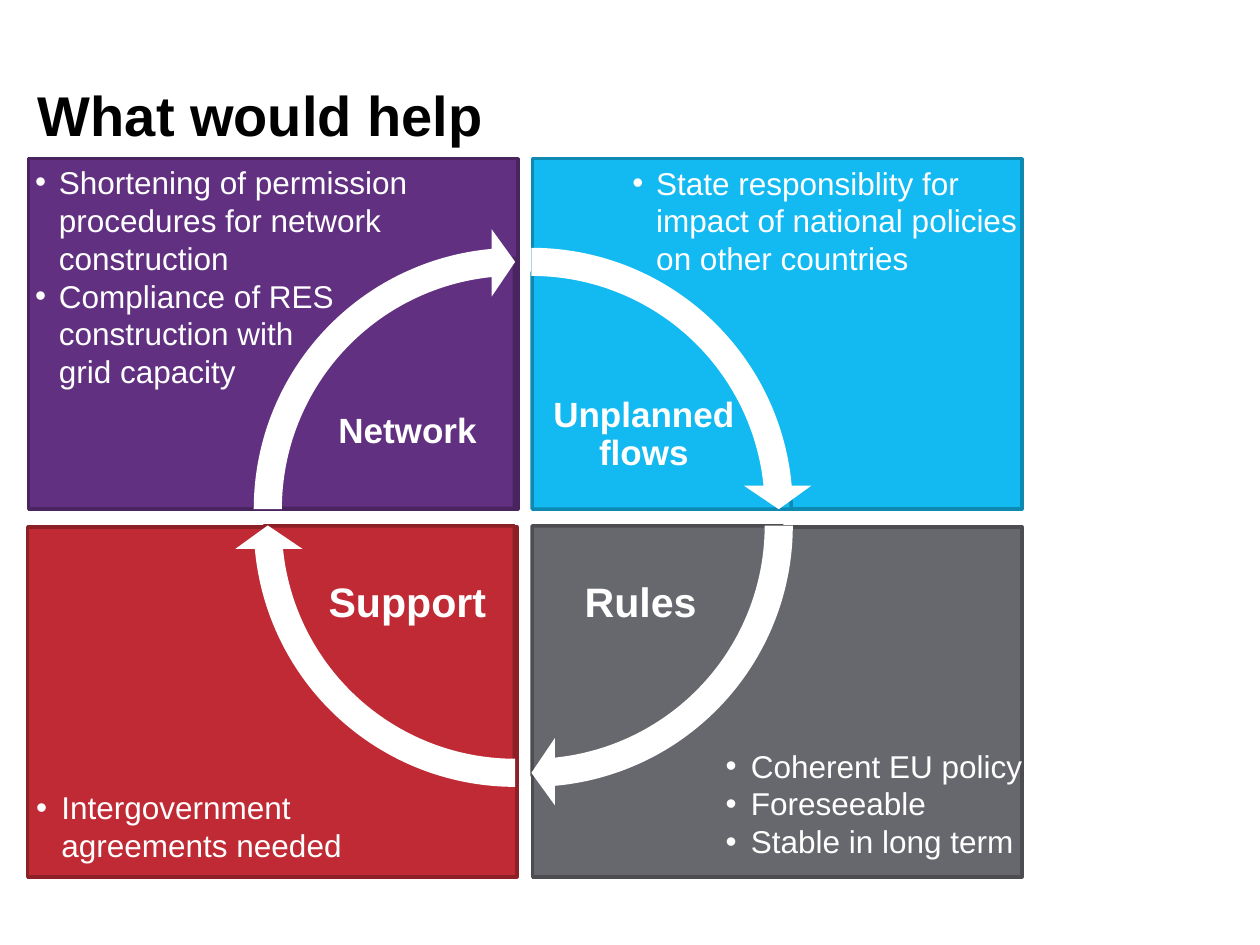
from dataclasses import dataclass

from lxml.etree import SubElement
from pptx import Presentation
from pptx.dml.color import RGBColor
from pptx.enum.shapes import MSO_SHAPE as Preset
from pptx.enum.text import MSO_ANCHOR as Anchor, PP_ALIGN as Align
from pptx.oxml.ns import qn
from pptx.util import Cm, Pt

COLORS = {
    "text": "000000", "white": "FFFFFF",
    "blue": "13B9F1", "blue_edge": "0E89B2",
    "purple": "623080", "purple_edge": "49245F",
    "red": "BF2A34", "red_edge": "8D1F26",
    "gray": "67676E", "gray_edge": "4C4C51",
}
PANEL_SIZE = (9.86, 7.06)
ARROW_SIZE = (11.33, 11.33)
DEFAULT_INSETS = (0.25, 0.13, 0.25, 0.13)
LABEL_INSETS = (0.08,) * 4
QUARTER = 54  # 90 degrees in the units of the angle adjustments
ARROW_SWEEP = 50.73


@dataclass
class Quadrant:
    """One topic; boxes are (left, top, width, height) in centimetres."""
    label: str
    label_size: float
    color: str
    start: int
    panel_at: tuple
    points: list
    points_box: tuple
    sector_box: tuple
    label_box: tuple
    arrow_at: tuple
    insets: tuple = DEFAULT_INSETS
    hanging: float = 0.51


QUADRANTS = [
    Quadrant("Unplanned flows", 20, "blue", 3 * QUARTER, (10.74, 3.2),
             ["State responsiblity for impact of national policies on other countries"],
             (12.34, 3.25, 8.23, 2.51), (5.51, 5.49, 10.44, 9.55),
             (11.05, 7.47, 3.86, 2.62), (5.05, 4.6), (0.41, 0, 0, 0.13), 0.48),
    Quadrant("Rules", 23.5, "gray", 0, (10.74, 10.62),
             ["Coherent EU policy", "Foreseeable", "Stable in long term"],
             (14.38, 14.58, 6.63, 3.23), (5.69, 5.56, 10.08, 10.08),
             (11.05, 10.8, 3.73, 2.77), (5.05, 4.93)),
    Quadrant("Support", 23.5, "red", QUARTER, (0.56, 10.62),
             ["Intergovernment agreements needed"],
             (0.48, 15.7, 7.57, 1.91), (5.33, 5.56, 10.08, 10.08),
             (6.35, 10.8, 3.73, 2.77), (4.72, 4.93)),
    Quadrant("Network", 20, "purple", 2 * QUARTER, (0.58, 3.2),
             ["Shortening of permission procedures for network construction",
              "Compliance of RES construction with\vgrid capacity"],
             (0.46, 3.3, 9.58, 4.55), (5.33, 5.21, 10.08, 10.08),
             (6.35, 7.32, 3.73, 2.77), (4.72, 4.6), (0.25, 0.13, 0, 0.13), 0.48),
]


class SlideBuilder:
    font_name = "Arial"

    def __init__(self, slide):
        self.slide = slide

    def style(self, paragraph, size, color="white", bold=False):
        font = paragraph.font
        font.name, font.size, font.bold = self.font_name, Pt(size), bold
        font.color.rgb = RGBColor.from_string(COLORS[color])

    def title(self, text, box):
        heading = self.slide.shapes.title
        heading.left, heading.top, heading.width, heading.height = map(Cm, box)
        frame = heading.text_frame
        frame.text = text
        frame.vertical_anchor = Anchor.MIDDLE
        frame.paragraphs[0].alignment = Align.LEFT
        self.style(frame.paragraphs[0], 32, "text", True)

    def shape(self, preset, box, color, edge=None, adjustments=()):
        shape = self.slide.shapes.add_shape(preset, *map(Cm, box))
        shape.shadow.inherit = False
        shape.fill.solid()
        shape.fill.fore_color.rgb = RGBColor.from_string(COLORS[color])
        if edge:
            shape.line.color.rgb = RGBColor.from_string(COLORS[edge])
            shape.line.width = Pt(2)
        else:
            shape.line.fill.background()
        for index, value in enumerate(adjustments):
            shape.adjustments[index] = value

    def text_frame(self, box, insets):
        frame = self.slide.shapes.add_textbox(*map(Cm, box)).text_frame
        frame.word_wrap = True
        frame.vertical_anchor = Anchor.MIDDLE
        (frame.margin_left, frame.margin_top,
         frame.margin_right, frame.margin_bottom) = map(Cm, insets)
        return frame

    def bullets(self, points, box, insets, hanging):
        frame = self.text_frame(box, insets)
        for index, point in enumerate(points):
            paragraph = frame.add_paragraph() if index else frame.paragraphs[0]
            paragraph.text = point
            properties = paragraph._p.get_or_add_pPr()
            properties.set("marL", str(Cm(hanging)))
            properties.set("indent", str(-Cm(hanging)))
            SubElement(properties, qn("a:buFont"), typeface=self.font_name)
            SubElement(properties, qn("a:buChar"), char="•")
            self.style(paragraph, 18)

    def label(self, text, size, box):
        paragraph = self.text_frame(box, LABEL_INSETS).paragraphs[0]
        paragraph.text = text
        paragraph.alignment = Align.CENTER
        paragraph.line_spacing = 0.9
        self.style(paragraph, size, bold=True)


def main():
    deck = Presentation()
    deck.slide_width, deck.slide_height = Cm(25.4), Cm(19.05)
    builder = SlideBuilder(deck.slides.add_slide(deck.slide_layouts.get_by_name("Title Only")))
    builder.title("What would help", (0.51, 0.71, 20.4, 3.18))

    for quadrant in QUADRANTS:
        builder.shape(Preset.RECTANGLE, quadrant.panel_at + PANEL_SIZE,
                      quadrant.color, quadrant.color + "_edge")
    for quadrant in QUADRANTS:
        builder.bullets(quadrant.points, quadrant.points_box,
                        quadrant.insets, quadrant.hanging)
    for quadrant in QUADRANTS:
        sector_end = (quadrant.start + QUARTER) % (4 * QUARTER)
        builder.shape(Preset.PIE, quadrant.sector_box, quadrant.color,
                      quadrant.color + "_edge", (quadrant.start, sector_end))
        builder.label(quadrant.label, quadrant.label_size, quadrant.label_box)
    for quadrant in QUADRANTS:
        builder.shape(Preset.CIRCULAR_ARROW, quadrant.arrow_at + ARROW_SIZE, "white",
                      adjustments=(0.05, 3.28, quadrant.start + ARROW_SWEEP,
                                   quadrant.start, 0.06))

    deck.save("out.pptx")


if __name__ == "__main__":
    main()
